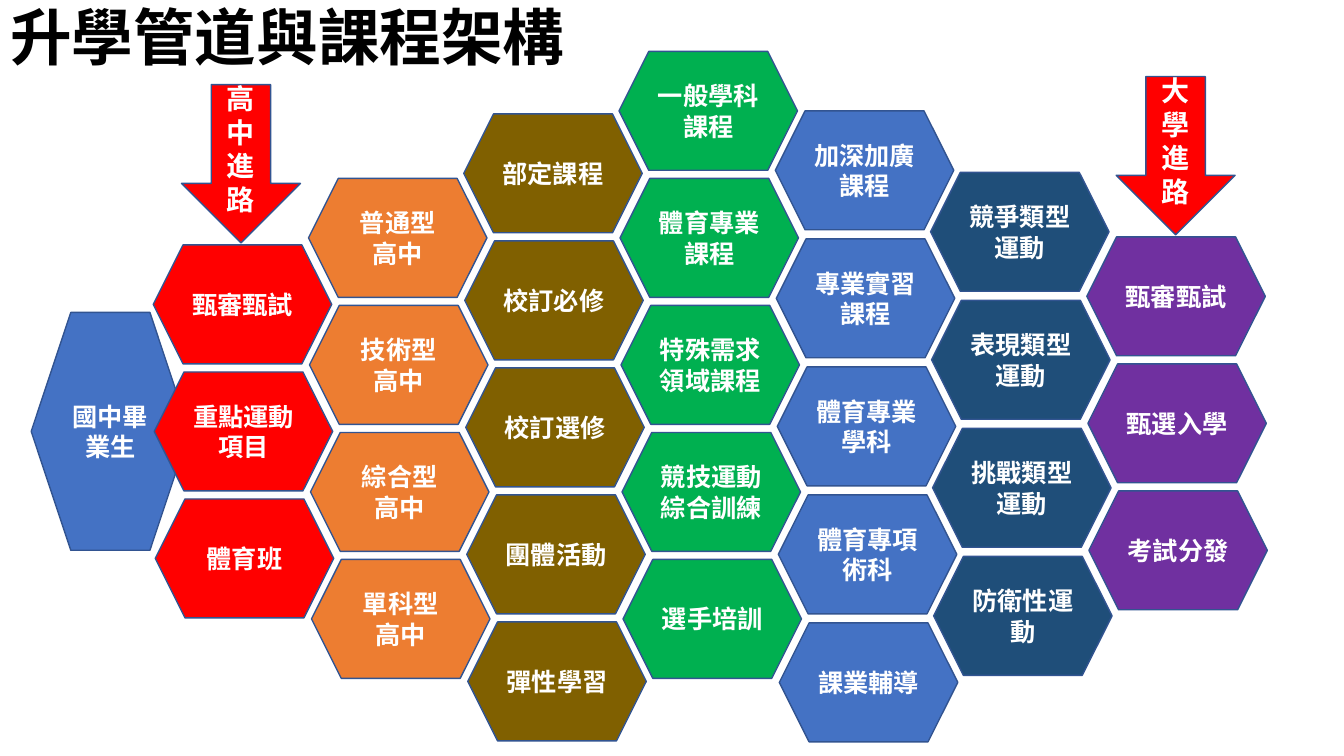
import lxml.etree
import pptx
import pptx.dml.color
import pptx.enum.shapes
import pptx.enum.text
import pptx.oxml.ns
import pptx.util

Inches = pptx.util.Inches
SHAPE = pptx.enum.shapes.MSO_SHAPE
ALIGN = pptx.enum.text.PP_ALIGN
MIDDLE = pptx.enum.text.MSO_ANCHOR.MIDDLE

CELL_WIDTH, CELL_HEIGHT = 1.77, 1.18
ROW_DRIFT = 0.01  # each row sits slightly right of the one above

# colour, left and top of the first cell, row pitch, labels from top to bottom
STAGES = [
    ("FF0000", 1.52, 2.43, 1.26, ["甄審甄試", "重點運動項目", "體育班"]),
    ("ED7D31", 3.06, 1.77, 1.26,
     ["普通型\n高中", "技術型\n高中", "綜合型\n高中", "單科型\n高中"]),
    ("806000", 4.6, 1.13, 1.26,
     ["部定課程", "校訂必修", "校訂選修", "團體活動", "彈性學習"]),
    ("00B050", 6.14, 0.51, 1.26,
     ["一般學科\n課程", "體育專業\n課程", "特殊需求領域課程", "競技運動綜合訓練", "選手培訓"]),
    ("4472C4", 7.69, 1.1, 1.27,
     ["加深加廣課程", "專業實習課程", "體育專業學科", "體育專項術科", "課業輔導"]),
    ("1F4E79", 9.23, 1.71, 1.27,
     ["競爭類型運動", "表現類型運動", "挑戰類型運動", "防衛性運動"]),
    ("7030A0", 10.78, 2.35, 1.26, ["甄審甄試", "甄選入學", "考試分發"]),
]


def rgb(hex_code):
    return pptx.dml.color.RGBColor.from_string(hex_code)


class PathwaySlide:
    font = "Noto Sans CJK SC"
    outline = "325491"

    def __init__(self, deck):
        self.slide = deck.slides.add_slide(deck.slide_layouts[5])

    def label(self, shape, text, size, colour, align):
        frame = shape.text_frame
        frame.text = text
        frame.word_wrap = True
        frame.vertical_anchor = MIDDLE
        for paragraph in frame.paragraphs:
            paragraph.alignment = align
            for run in paragraph.runs:
                run.font.size = pptx.util.Pt(size)
                run.font.bold = True
                run.font.color.rgb = rgb(colour)
                run.font.name = self.font
                east_asian = lxml.etree.SubElement(
                    run.font._element, pptx.oxml.ns.qn("a:ea"))
                east_asian.set("typeface", self.font)

    def title(self, text, left, top, width, height):
        heading = self.slide.shapes.title
        heading.left, heading.top = Inches(left), Inches(top)
        heading.width, heading.height = Inches(width), Inches(height)
        self.label(heading, text, 44, "000000", ALIGN.LEFT)
        heading.text_frame.paragraphs[0].line_spacing = 0.9

    def block(self, kind, text, fill, left, top, width, height, size):
        shape = self.slide.shapes.add_shape(
            kind, Inches(left), Inches(top), Inches(width), Inches(height))
        shape.shadow.inherit = False
        shape.fill.solid()
        shape.fill.fore_color.rgb = rgb(fill)
        shape.line.color.rgb = rgb(self.outline)
        shape.line.width = pptx.util.Pt(1)
        self.label(shape, text, size, "FFFFFF", ALIGN.CENTER)

    def hexagon(self, text, fill, left, top, width=CELL_WIDTH, height=CELL_HEIGHT):
        self.block(SHAPE.HEXAGON, text, fill, left, top, width, height, 18)

    def stage(self, fill, left, top, pitch, labels):
        """Stack one honeycomb column of hexagons."""
        for row, text in enumerate(labels):
            self.hexagon(text, fill, left + row * ROW_DRIFT, top + row * pitch)

    def entry_arrow(self, text, left, top):
        self.block(SHAPE.DOWN_ARROW, text, "FF0000", left, top, 1.18, 1.57, 20)


def main():
    deck = pptx.Presentation()
    deck.slide_width, deck.slide_height = Inches(13.33), Inches(7.5)
    pathway = PathwaySlide(deck)
    pathway.title("升學管道與課程架構", 0, 0.01, 5.91, 0.79)
    pathway.hexagon("國中畢業生", "4472C4", 0.31, 3.1, 1.57, 2.36)
    for stage in STAGES:
        pathway.stage(*stage)
    pathway.entry_arrow("高中\n進路", 1.8, 0.84)
    pathway.entry_arrow("大學\n進路", 11.07, 0.76)
    deck.save("out.pptx")


if __name__ == "__main__":
    main()
